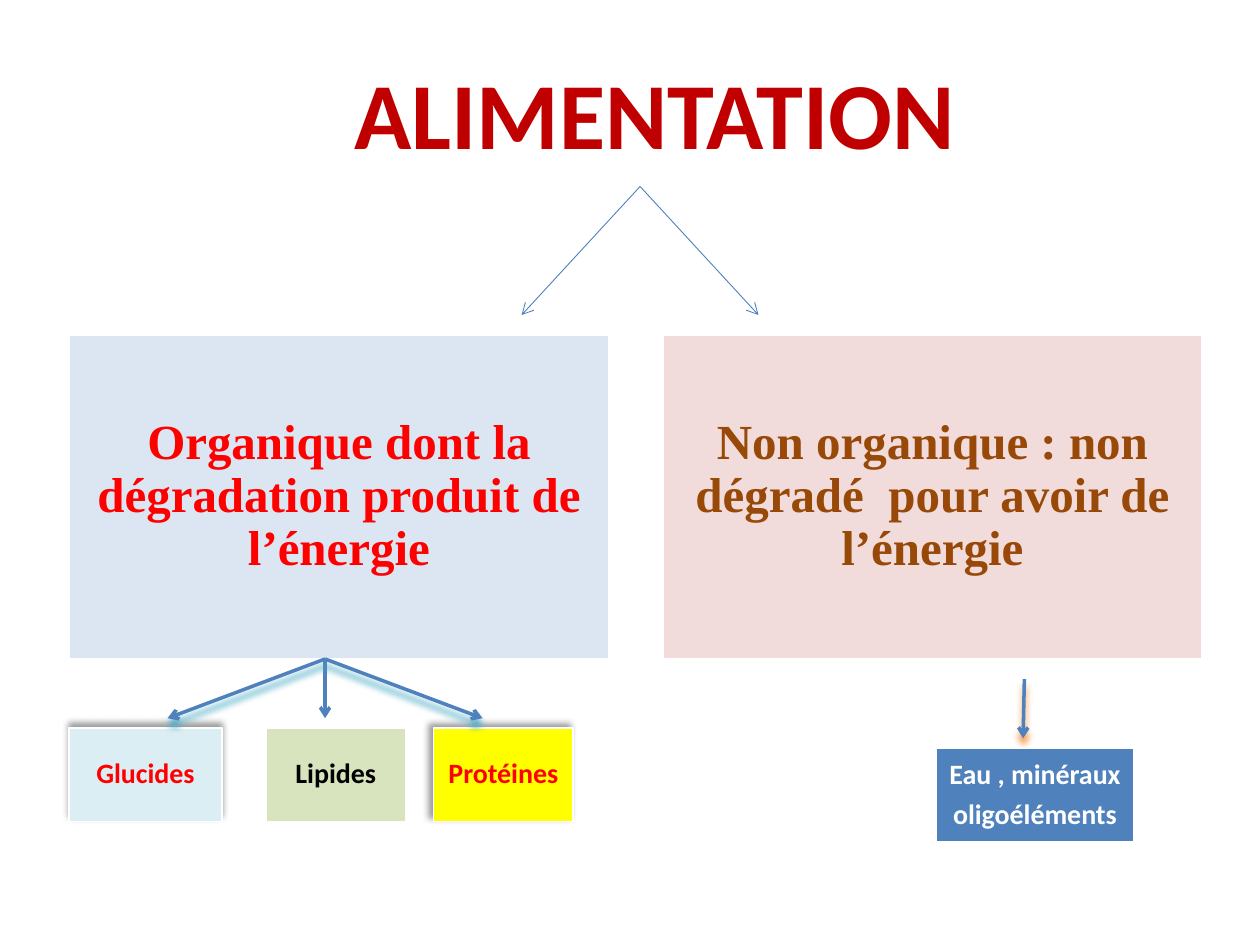
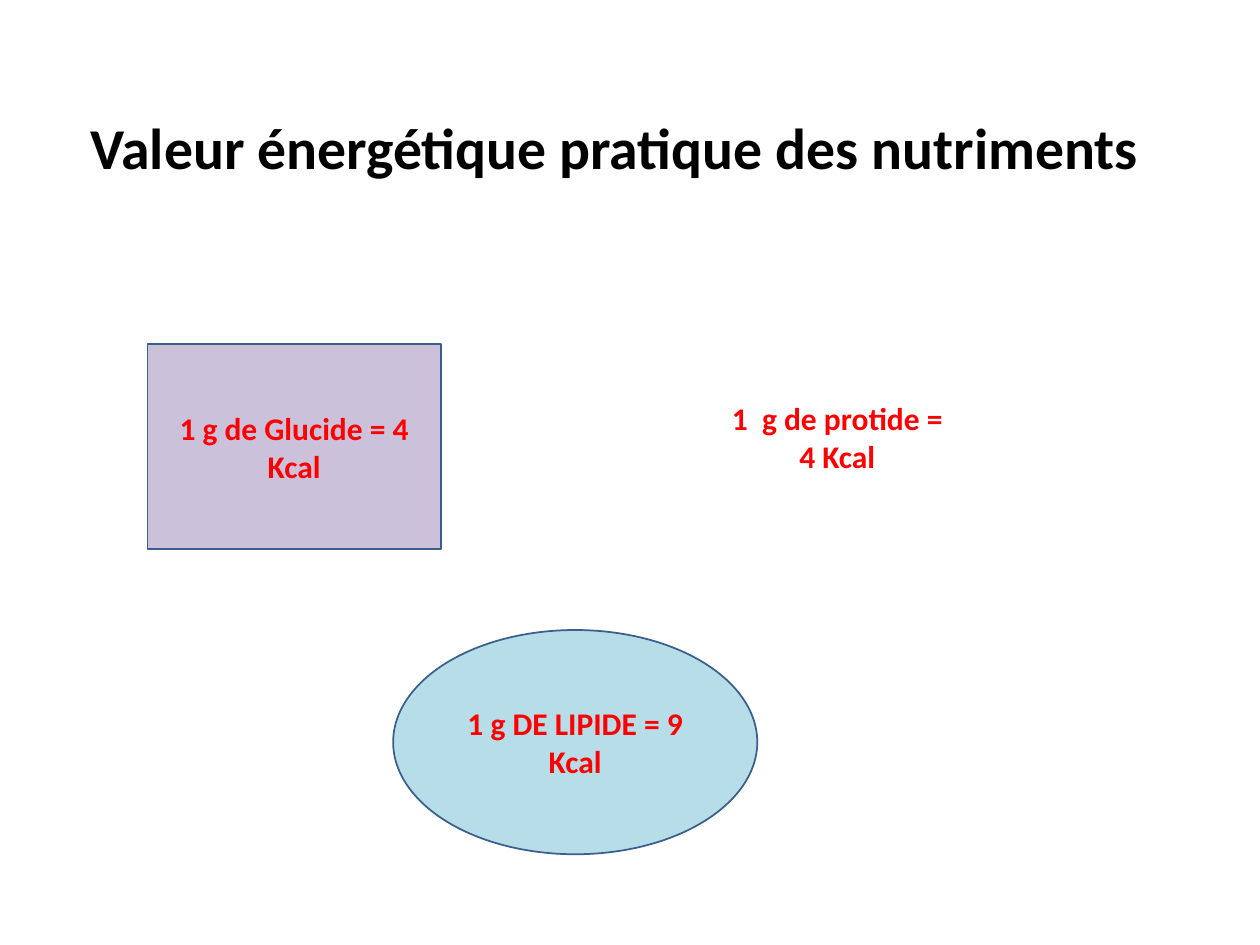
from dataclasses import dataclass
from typing import Optional

from lxml.etree import SubElement
from pptx import Presentation
from pptx.dml.color import RGBColor
from pptx.enum.shapes import MSO_CONNECTOR, MSO_SHAPE
from pptx.enum.text import MSO_ANCHOR, PP_ALIGN
from pptx.oxml.ns import qn
from pptx.util import Inches, Pt

COLORS = {
    "white": "FFFFFF", "black": "000000", "red": "FF0000", "dark red": "C00000",
    "brown": "984807", "blue": "4F81BD", "navy": "3A5F8C", "sky": "DCE6F2",
    "rose": "F2DCDB", "ice": "DBEEF4", "green": "D7E4BD", "yellow": "FFFF00",
    "lilac": "CCC1DA", "aqua": "B7DEE8", "teal": "4BACC6", "orange": "F79646",
}
SANS, SERIF = "Calibri", "Times New Roman"


@dataclass
class Style:
    size: float
    color: str
    font: str = SANS
    align: PP_ALIGN = PP_ALIGN.CENTER
    anchor: MSO_ANCHOR = MSO_ANCHOR.MIDDLE
    inset: Optional[float] = None
    space: float = 1.0
    after: float = 0


@dataclass
class Shade:
    color: str
    alpha: int
    dist: float
    angle: int


@dataclass
class Box:
    left: float
    top: float
    width: float
    height: float
    lines: list[str]
    style: Style
    fill: Optional[str] = None
    line: str = "white"
    kind: MSO_SHAPE = MSO_SHAPE.RECTANGLE
    shade: Optional[Shade] = None


@dataclass
class Arrow:
    start: tuple[float, float]
    end: tuple[float, float]
    width: float = 2
    shade: Optional[Shade] = None


def rgb(name: str) -> RGBColor:
    return RGBColor.from_string(COLORS[name])


def add_shade(props, shade: Optional[Shade]) -> None:
    """Give shape properties an outer shadow, or an empty effect list."""
    old = props.find(qn("a:effectLst"))
    if old is not None:
        props.remove(old)
    effects = SubElement(props, qn("a:effectLst"))
    if shade:
        outer = SubElement(effects, qn("a:outerShdw"), blurRad=str(Pt(4)),
                           dist=str(Pt(shade.dist)), dir=str(shade.angle * 60000),
                           rotWithShape="0")
        tint = SubElement(outer, qn("a:srgbClr"), val=COLORS[shade.color])
        SubElement(tint, qn("a:alpha"), val=str(shade.alpha * 1000))


def write(frame, lines: list[str], style: Style) -> None:
    frame.word_wrap = True
    frame.vertical_anchor = style.anchor
    if style.inset is not None:
        frame.margin_left = frame.margin_right = Inches(style.inset)
        frame.margin_top = frame.margin_bottom = Inches(style.inset)
    for i, line in enumerate(lines):
        para = frame.add_paragraph() if i else frame.paragraphs[0]
        para.alignment = style.align
        para.line_spacing = style.space
        para.space_after = Pt(style.after)
        run = para.add_run()
        run.text = line
        run.font.name = style.font
        run.font.size = Pt(style.size)
        run.font.bold = True
        run.font.color.rgb = rgb(style.color)


def add_box(slide, box: Box) -> None:
    """Draw a filled shape, or a plain text box when there is no fill."""
    place = [Inches(v) for v in (box.left, box.top, box.width, box.height)]
    if box.fill:
        shape = slide.shapes.add_shape(box.kind, *place)
        shape.shadow.inherit = False
        shape.fill.solid()
        shape.fill.fore_color.rgb = rgb(box.fill)
        shape.line.color.rgb = rgb(box.line)
        shape.line.width = Pt(1)
        if box.shade:
            add_shade(shape.element.spPr, box.shade)
    else:
        shape = slide.shapes.add_textbox(*place)
    write(shape.text_frame, box.lines, box.style)


def add_arrow(slide, arrow: Arrow) -> None:
    ends = [Inches(v) for v in (*arrow.start, *arrow.end)]
    line = slide.shapes.add_connector(MSO_CONNECTOR.STRAIGHT, *ends)
    line.line.color.rgb = rgb("blue")
    line.line.width = Pt(arrow.width)
    SubElement(line.line._get_or_add_ln(), qn("a:tailEnd"), type="arrow")
    add_shade(line._element.spPr, arrow.shade)


def branch(color: str) -> Style:
    return Style(28, color, SERIF, inset=0.12, space=0.9, after=9.8)


def leaf(color: str) -> Style:
    return Style(16, color, inset=0.07, space=0.9, after=5.6)


TOP = MSO_ANCHOR.TOP
VALUE = Style(18, "red")
TEAL = Shade("teal", 100, 4, 90)
ROOT, FORK = (5.08, 1.48), (2.58, 5.23)

FOOD = [
    Box(0.55, 2.66, 4.28, 2.57, ["Organique dont la dégradation produit de l’énergie"],
        branch("red"), "sky"),
    Box(5.26, 2.66, 4.28, 2.57, ["Non organique : non dégradé  pour avoir de l’énergie"],
        branch("brown"), "rose"),
    Box(0.55, 5.78, 1.21, 0.74, ["Glucides"], leaf("red"), "ice",
        shade=Shade("black", 40, 3, 270)),
    Box(2.11, 5.78, 1.11, 0.74, ["Lipides"], leaf("black"), "green"),
    Box(3.44, 5.78, 1.11, 0.74, ["Protéines"], leaf("red"), "yellow",
        shade=Shade("black", 40, 3, 225)),
    Box(7.43, 5.94, 1.57, 0.74, ["Eau , minéraux", "oligoéléments"],
        leaf("white"), "blue"),
    Box(0.39, 0.39, 9.61, 1.01, ["ALIMENTATION"], Style(54, "dark red", anchor=TOP)),
]
ARROWS = [
    *(Arrow(ROOT, (ROOT[0] + dx, 2.5), 0.5) for dx in (0.94, -0.94)),
    Arrow((8.13, 5.39), (8.12, 5.86), shade=Shade("orange", 100, 4, 90)),
    *(Arrow(FORK, (FORK[0] + dx, 5.7), shade=TEAL if dx else None)
      for dx in (1.25, 0, -1.25)),
]
ENERGY = [
    Box(0.62, 0.47, 8.62, 1.45, ["Valeur énergétique pratique des nutriments"],
        Style(33, "black", align=PP_ALIGN.LEFT, space=0.9)),
    Box(1.17, 2.73, 2.33, 1.63, ["1 g de Glucide = 4 Kcal"], VALUE, "lilac", "navy"),
    Box(5.55, 3.12, 2.19, 0.71, ["1  g de protide =", "4 Kcal"],
        Style(18, "red", anchor=TOP)),
    Box(3.12, 5, 2.89, 1.78, ["1 g DE LIPIDE = 9 Kcal"], VALUE, "aqua", "navy",
        MSO_SHAPE.OVAL),
]


def main() -> None:
    deck = Presentation()
    deck.slide_width, deck.slide_height = Inches(10), Inches(7.5)
    for boxes, arrows in ((FOOD, ARROWS), (ENERGY, [])):
        slide = deck.slides.add_slide(deck.slide_layouts[6])
        for box in boxes:
            add_box(slide, box)
        for arrow in arrows:
            add_arrow(slide, arrow)
    deck.save("out.pptx")


if __name__ == "__main__":
    main()
